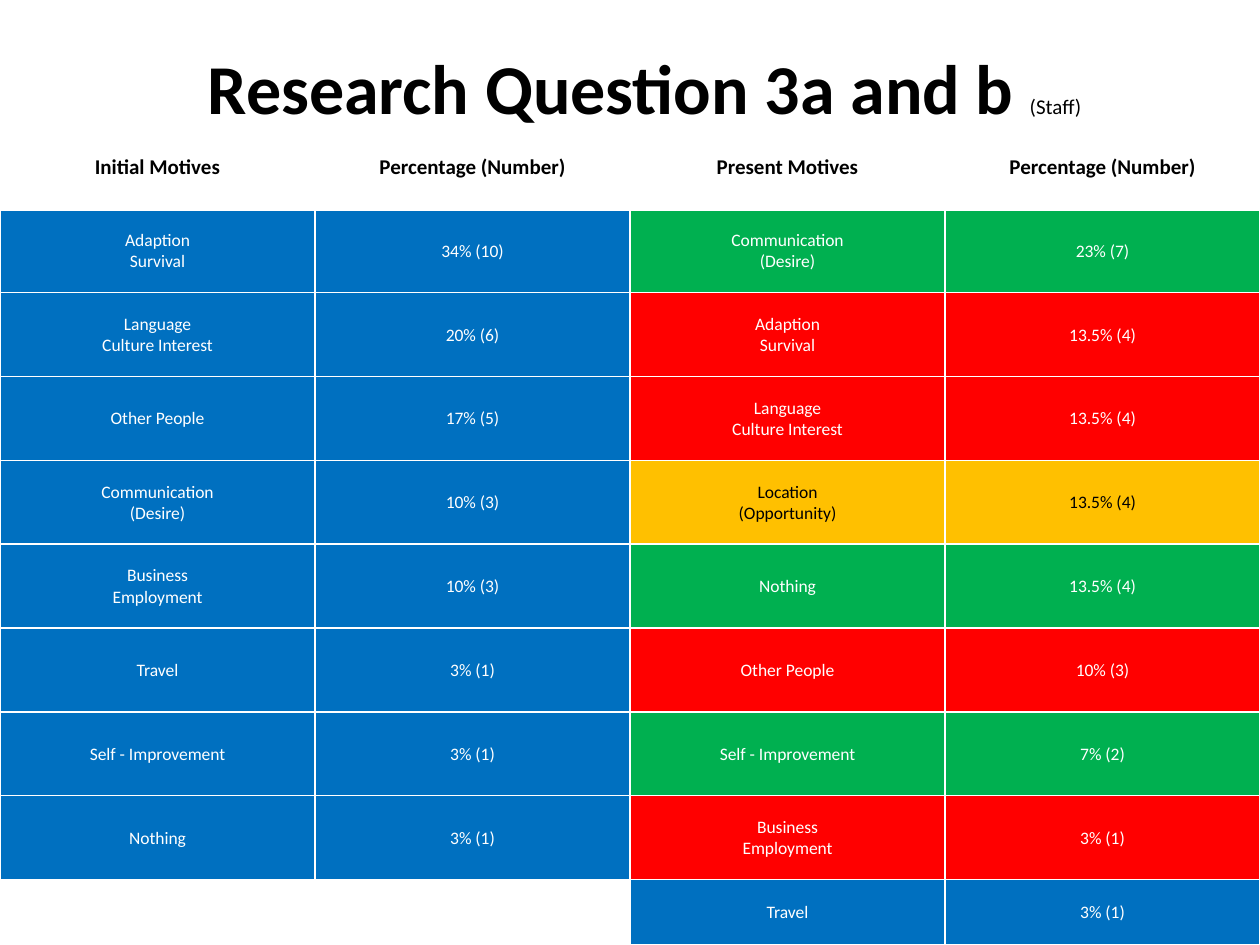
from lxml import etree
from pptx import Presentation
from pptx.dml.color import RGBColor
from pptx.enum.text import MSO_ANCHOR, PP_ALIGN
from pptx.oxml.ns import qn
from pptx.util import Cm, Pt

CENTER = PP_ALIGN.CENTER
MIDDLE = MSO_ANCHOR.MIDDLE
BOTTOM = MSO_ANCHOR.BOTTOM

COLORS = {
    "white": "FFFFFF",
    "black": "000000",
    "blue": "0070C0",
    "green": "00B050",
    "red": "FF0000",
    "amber": "FFC000",
}
TEXT_ON = {"white": "black", "amber": "black"}
FONT_NAME = "Calibri"

SLIDE_WIDTH, SLIDE_HEIGHT = Cm(25.4), Cm(19.05)
TABLE_TOP = Cm(2.52)
ROW_HEIGHT, LAST_ROW_HEIGHT = Cm(1.69), Cm(1.32)

CELL_FORMAT = {
    "margin_left": Cm(0.02),
    "margin_right": Cm(0.02),
    "margin_top": Cm(0.02),
    "margin_bottom": Cm(0),
    "vertical_anchor": MIDDLE,
}
HEADER_FONT = {"name": FONT_NAME, "size": Pt(12), "bold": True}
BODY_FONT = {"name": FONT_NAME, "size": Pt(10), "bold": False}
TITLE_FONT = {"name": FONT_NAME, "size": Pt(40), "bold": True}
GROUP_FONT = {"name": FONT_NAME, "size": Pt(12), "bold": False}

HEADERS = ["Initial Motives", "Percentage (Number)",
           "Present Motives", "Percentage (Number)"]
INITIAL_MOTIVES = [
    ("Adaption\nSurvival", "34% (10)", "blue"),
    ("Language\nCulture Interest", "20% (6)", "blue"),
    ("Other People", "17% (5)", "blue"),
    ("Communication\n(Desire)", "10% (3)", "blue"),
    ("Business\nEmployment", "10% (3)", "blue"),
    ("Travel", "3% (1)", "blue"),
    ("Self - Improvement", "3% (1)", "blue"),
    ("Nothing", "3% (1)", "blue"),
    ("", "", "white"),
]
PRESENT_MOTIVES = [
    ("Communication\n(Desire)", "23% (7)", "green"),
    ("Adaption\nSurvival", "13.5% (4)", "red"),
    ("Language\nCulture Interest", "13.5% (4)", "red"),
    ("Location\n(Opportunity)", "13.5% (4)", "amber"),
    ("Nothing", "13.5% (4)", "green"),
    ("Other People", "10% (3)", "red"),
    ("Self - Improvement", "7% (2)", "green"),
    ("Business\nEmployment", "3% (1)", "red"),
    ("Travel", "3% (1)", "blue"),
]


def apply_format(target, values):
    for name, value in values.items():
        setattr(target, name, value)


def rgb(color):
    return RGBColor.from_string(COLORS[color])


def style_font(font, values, color):
    apply_format(font, values)
    font.color.rgb = rgb(color)


def add_title(slide):
    box = slide.shapes.add_textbox(Cm(1.3), Cm(0), Cm(23.39), Cm(2.72))
    apply_format(box.text_frame, {"word_wrap": True, "vertical_anchor": BOTTOM})
    paragraph = box.text_frame.paragraphs[0]
    paragraph.alignment = CENTER
    for text, values in (("Research Question 3a and b ", TITLE_FONT),
                         ("(Staff)", GROUP_FONT)):
        run = paragraph.add_run()
        run.text = text
        style_font(run.font, values, "black")


def set_borders(cell, bottom_width):
    """Draw white lines around the cell; call before setting its fill."""
    properties = cell._tc.get_or_add_tcPr()
    widths = {"a:lnL": Pt(1), "a:lnR": Pt(1), "a:lnT": Pt(1), "a:lnB": bottom_width}
    for tag, width in widths.items():
        line = etree.SubElement(properties, qn(tag), w=str(width))
        fill = etree.SubElement(line, qn("a:solidFill"))
        etree.SubElement(fill, qn("a:srgbClr"), val=COLORS["white"])


def fill_cell(cell, text, color, font_values, bottom_width=Pt(1)):
    apply_format(cell, CELL_FORMAT)
    set_borders(cell, bottom_width)
    cell.fill.solid()
    cell.fill.fore_color.rgb = rgb(color)
    cell.text = text
    for paragraph in cell.text_frame.paragraphs:
        paragraph.alignment = CENTER
        style_font(paragraph.font, font_values, TEXT_ON.get(color, "white"))


def add_motives_table(slide):
    row_count, column_count = len(INITIAL_MOTIVES) + 1, len(HEADERS)
    frame = slide.shapes.add_table(row_count, column_count, Cm(0), TABLE_TOP,
                                   SLIDE_WIDTH, SLIDE_HEIGHT - TABLE_TOP)
    table = frame.table
    table.horz_banding = False
    for row in table.rows:
        row.height = ROW_HEIGHT
    table.rows[row_count - 1].height = LAST_ROW_HEIGHT

    for column, header in enumerate(HEADERS):
        fill_cell(table.cell(0, column), header, "white", HEADER_FONT, Pt(3))
    for first_column, motives in ((0, INITIAL_MOTIVES), (2, PRESENT_MOTIVES)):
        for row, (motive, share, color) in enumerate(motives, start=1):
            fill_cell(table.cell(row, first_column), motive, color, BODY_FONT)
            fill_cell(table.cell(row, first_column + 1), share, color, BODY_FONT)


def main():
    presentation = Presentation()
    presentation.slide_width = SLIDE_WIDTH
    presentation.slide_height = SLIDE_HEIGHT
    slide = presentation.slides.add_slide(presentation.slide_layouts[6])
    add_title(slide)
    add_motives_table(slide)
    presentation.save("out.pptx")


if __name__ == "__main__":
    main()
